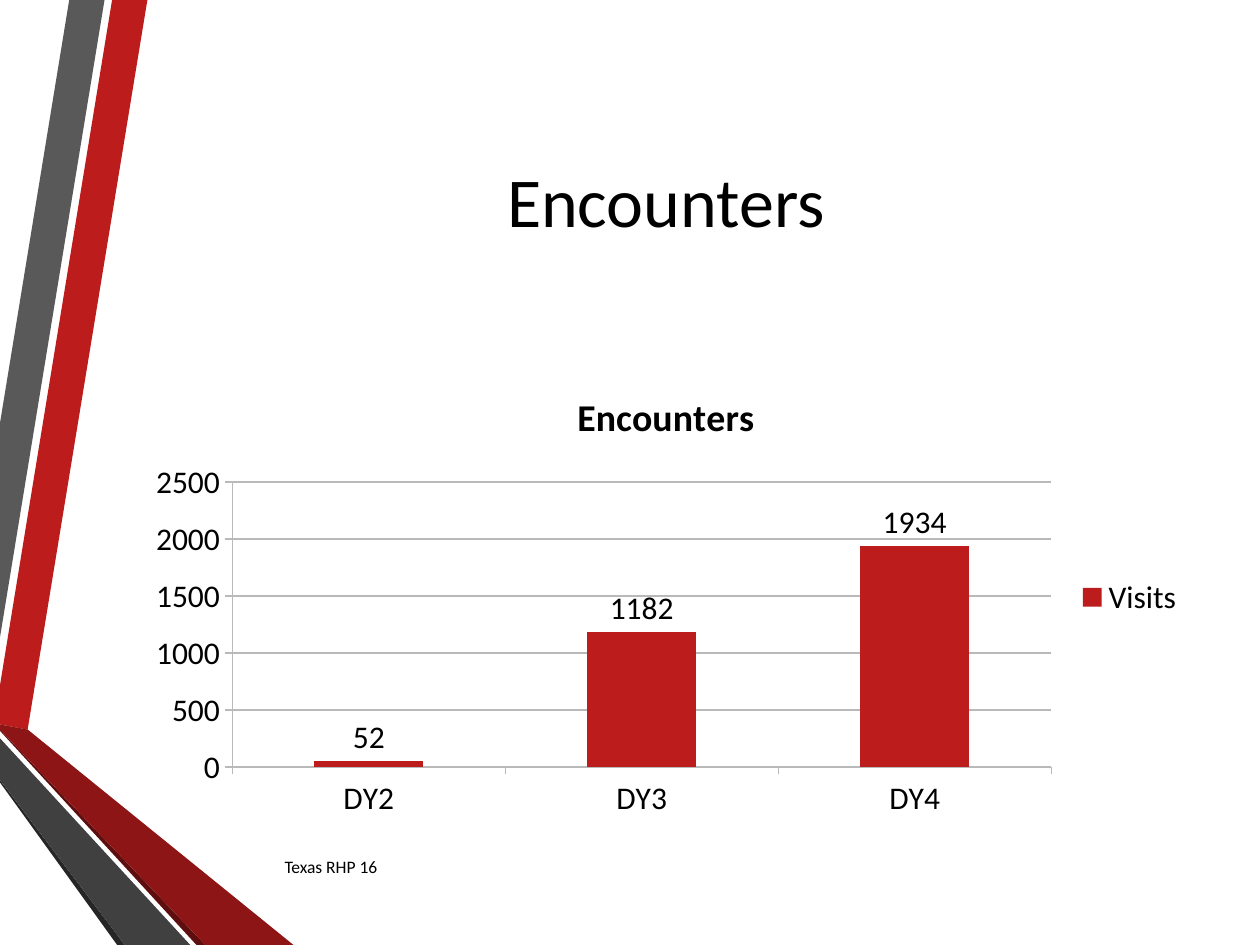
from pptx import Presentation
from pptx.chart.data import CategoryChartData
from pptx.dml.color import RGBColor
from pptx.enum.chart import (XL_CHART_TYPE, XL_LABEL_POSITION as LabelPos,
                             XL_LEGEND_POSITION as LegendPos, XL_TICK_MARK as Tick)
from pptx.enum.text import MSO_ANCHOR as Anchor, PP_ALIGN as Align
from pptx.util import Inches, Pt

FONT = "Calibri"
BLACK, RED, GRID = "000000", "BC1C1C", "B9B9B9"

# Colour and outline of each ribbon, in inches, from back to front
RIBBONS = [
    (RED, [(0, 5.44), (0, 5.75), (0.22, 5.79), (1.17, 0), (0.89, 0)]),
    ("595959", [(0.83, 0), (0.55, 0), (0, 3.36), (0, 5.06)]),
    ("262626", [(0, 6.19), (0, 6.21), (0.93, 7.5), (0.99, 7.5)]),
    ("5E0E0E", [(0, 5.79), (0, 5.8), (1.56, 7.5), (1.63, 7.5)]),
    ("8D1515", [(0, 5.79), (1.63, 7.5), (2.33, 7.5), (0.22, 5.79), (0, 5.75)]),
    ("404040", [(0, 6.19), (0.99, 7.5), (1.51, 7.5), (0, 5.86)]),
]
VISITS = {"DY2": 52, "DY3": 1182, "DY4": 1934}


def rgb(hex_color):
    return RGBColor.from_string(hex_color)


def style_font(font, size, color=BLACK, bold=False):
    font.name, font.size, font.bold = FONT, Pt(size), bold
    font.color.rgb = rgb(color)


def add_text(slide, box, text, size, color=BLACK, align=Align.LEFT):
    frame = slide.shapes.add_textbox(*map(Inches, box)).text_frame
    frame.word_wrap = True
    frame.vertical_anchor = Anchor.MIDDLE
    paragraph = frame.paragraphs[0]
    paragraph.alignment = align
    run = paragraph.add_run()
    run.text = text
    style_font(run.font, size, color)


def add_ribbons(slide, left, top):
    """Draw the folded ribbons with their corner at left, top."""
    for color, outline in RIBBONS:
        points = [(Inches(left + x), Inches(top + y)) for x, y in outline]
        builder = slide.shapes.build_freeform(*points[0])
        builder.add_line_segments(points[1:], close=True)
        ribbon = builder.convert_to_shape()
        ribbon.fill.solid()
        ribbon.fill.fore_color.rgb = rgb(color)
        ribbon.line.fill.background()
        ribbon.shadow.inherit = False


def add_visits_chart(slide, box):
    data = CategoryChartData()
    data.categories = list(VISITS)
    data.add_series("Visits", list(VISITS.values()))
    chart = slide.shapes.add_chart(
        XL_CHART_TYPE.COLUMN_CLUSTERED, *map(Inches, box), data).chart
    style_font(chart.font, 18)

    chart.has_title = True
    heading = chart.chart_title.text_frame
    heading.text = "Encounters"
    style_font(heading.paragraphs[0].runs[0].font, 21.6, bold=True)
    chart.has_legend = True
    chart.legend.position = LegendPos.RIGHT
    chart.legend.include_in_layout = False

    for axis in (chart.category_axis, chart.value_axis):
        axis.major_tick_mark, axis.minor_tick_mark = Tick.OUTSIDE, Tick.NONE
        axis.format.line.color.rgb = rgb(GRID)
    chart.value_axis.has_major_gridlines = True
    chart.value_axis.major_gridlines.format.line.color.rgb = rgb(GRID)

    plot = chart.plots[0]
    plot.gap_width = 150
    plot.vary_by_categories = False
    visits = plot.series[0]
    visits.format.fill.solid()
    visits.format.fill.fore_color.rgb = rgb(RED)
    labels = visits.data_labels
    labels.show_value = True
    labels.position = LabelPos.OUTSIDE_END
    style_font(labels.font, 18)


def main():
    deck = Presentation()
    deck.slide_width, deck.slide_height = Inches(10), Inches(7.5)
    slide = deck.slides.add_slide(deck.slide_layouts[6])
    add_ribbons(slide, 0, 0)
    add_text(slide, (1.07, 0.5, 8.43, 2.17), "Encounters", 40, align=Align.CENTER)
    add_visits_chart(slide, (1.07, 2.92, 8.43, 3.64))
    add_text(slide, (2.16, 6.68, 5.81, 0.4), "Texas RHP 16", 10)
    deck.save("out.pptx")


if __name__ == "__main__":
    main()
